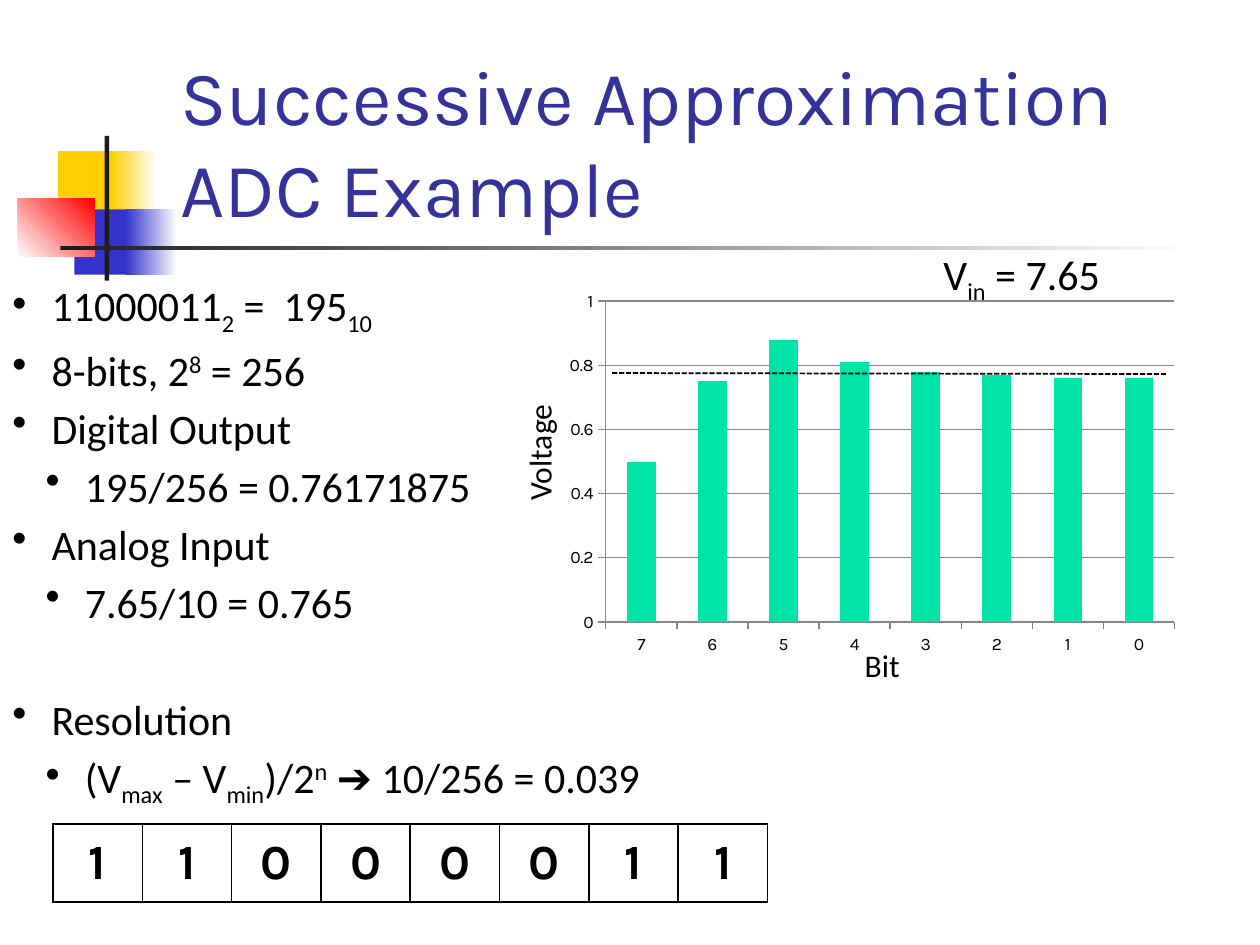
from dataclasses import dataclass

from lxml.etree import SubElement
from pptx import Presentation
from pptx.chart.data import CategoryChartData
from pptx.dml.color import RGBColor
from pptx.enum.chart import XL_CHART_TYPE, XL_TICK_MARK
from pptx.enum.dml import MSO_LINE
from pptx.enum.shapes import MSO_CONNECTOR, MSO_SHAPE
from pptx.enum.text import MSO_ANCHOR, PP_ALIGN
from pptx.oxml.ns import qn
from pptx.util import Cm, Pt

COLORS = {
    "yellow": "FFCF01", "blue": "3333CC", "red": "FF0000", "dark": "1C1C1C",
    "title": "333399", "bar": "00E4A8", "grid": "868686",
    "black": "000000", "white": "FFFFFF",
}
HANGING = 0.79  # bullet to text, in cm
LEVEL_STEP = 0.67
LINE_GAP = 4.3  # points
SUB, SUPER = -25, 30


@dataclass
class Block:
    left: float
    top: float
    width: float
    height: float
    start: str
    end: str = ""
    angle: int = 0


@dataclass
class Line:
    runs: list  # (text, baseline percent)
    level: int = 0
    bullet: bool = False
    before: float = 0
    indent: float = 0


def rgb(name: str) -> RGBColor:
    return RGBColor.from_string(COLORS[name])


def plain(text: str) -> list:
    return [Line([(text, 0)])]


def point(text: str, level: int = 0, before: float = LINE_GAP) -> Line:
    return Line([(text, 0)], level, True, before)


def write_text(frame, lines: list, *, size: float, font: str = "Calibri",
               color: str = "black", bold: bool = False,
               align=PP_ALIGN.LEFT, anchor=MSO_ANCHOR.TOP) -> None:
    frame.word_wrap = True
    frame.vertical_anchor = anchor
    for number, line in enumerate(lines):
        paragraph = frame.add_paragraph() if number else frame.paragraphs[0]
        paragraph.alignment = align
        paragraph.level = line.level
        paragraph.space_before = Pt(line.before)
        properties = paragraph._p.get_or_add_pPr()
        margin = line.indent
        if line.bullet:
            margin = HANGING + line.level * LEVEL_STEP
            properties.set("indent", str(-Cm(HANGING)))
            SubElement(properties, qn("a:buChar")).set("char", "•")
        properties.set("marL", str(Cm(margin)))
        for text, baseline in line.runs:
            run = paragraph.add_run()
            run.text = text
            run.font.name, run.font.size, run.font.bold = font, Pt(size), bold
            run.font.color.rgb = rgb(color)
            if baseline:
                run.font._element.set("baseline", str(baseline * 1000))


def add_text(slide, box: tuple, lines: list, rotation: float = 0, **text_format) -> None:
    label = slide.shapes.add_textbox(*map(Cm, box))
    label.rotation = rotation
    write_text(label.text_frame, lines, **text_format)


def add_block(slide, block: Block) -> None:
    shape = slide.shapes.add_shape(
        MSO_SHAPE.RECTANGLE, *map(Cm, (block.left, block.top, block.width, block.height)))
    shape.shadow.inherit = False
    shape.line.fill.background()
    if block.end:
        shape.fill.gradient()
        shape.fill.gradient_angle = block.angle
        for stop, name in zip(shape.fill.gradient_stops, (block.start, block.end)):
            stop.color.rgb = rgb(name)
    else:
        shape.fill.solid()
        shape.fill.fore_color.rgb = rgb(block.start)


def add_bits(slide, bits: str) -> None:
    table = slide.shapes.add_table(
        1, len(bits), Cm(1.07), Cm(16.61), Cm(14.4), Cm(1.57)).table
    for cell, bit in zip(table.iter_cells(), bits):
        cell.fill.background()
        cell.margin_left = cell.margin_right = cell.margin_top = Cm(0.03)
        cell.margin_bottom = 0
        write_text(cell.text_frame, plain(bit), size=28, font="Karla",
                   bold=True, align=PP_ALIGN.CENTER)
        cell.vertical_anchor = MSO_ANCHOR.MIDDLE
        properties = cell._tc.get_or_add_tcPr()
        for position, side in enumerate(("lnL", "lnR", "lnT", "lnB")):
            border = properties.makeelement(qn(f"a:{side}"), {"w": str(Pt(1))})
            fill = SubElement(border, qn("a:solidFill"))
            SubElement(fill, qn("a:srgbClr")).set("val", COLORS["black"])
            properties.insert(position, border)


def add_voltage_chart(slide) -> None:
    data = CategoryChartData()
    data.categories = list("76543210")
    data.add_series("Series 1", (0.5, 0.75, 0.88, 0.81, 0.78, 0.77, 0.76, 0.76))
    chart = slide.shapes.add_chart(
        XL_CHART_TYPE.COLUMN_CLUSTERED, Cm(11.23), Cm(5.72), Cm(12.7), Cm(7.62), data).chart
    chart.has_legend = chart.has_title = False
    chart.font.name, chart.font.size = "Karla", Pt(10)
    chart.font.color.rgb = rgb("black")

    plot = chart.plots[0]
    plot.gap_width = 150
    plot.vary_by_categories = False
    bars = plot.series[0].format.fill
    bars.solid()
    bars.fore_color.rgb = rgb("bar")

    bit_axis, voltage_axis = chart.category_axis, chart.value_axis
    voltage_axis.minimum_scale, voltage_axis.maximum_scale = 0, 1
    voltage_axis.major_unit = 0.2
    voltage_axis.has_major_gridlines = True
    for axis in (bit_axis, voltage_axis):
        axis.major_tick_mark = XL_TICK_MARK.OUTSIDE
    for rule in (bit_axis, voltage_axis, voltage_axis.major_gridlines):
        rule.format.line.color.rgb = rgb("grid")
        rule.format.line.width = Pt(0.75)


def add_input_level(slide) -> None:
    level = slide.shapes.add_connector(
        MSO_CONNECTOR.STRAIGHT, Cm(12.34), Cm(7.52), Cm(23.52), Cm(7.54))
    level.line.color.rgb = rgb("black")
    level.line.width = Pt(1)
    level.line.dash_style = MSO_LINE.SQUARE_DOT
    SubElement(level._element.spPr, qn("a:effectLst"))


DECORATION = [
    Block(1.17, 3.05, 1.22, 1.32, "yellow"),
    Block(2.24, 3.05, 0.91, 1.32, "yellow", "white"),
    Block(1.5, 4.22, 1.17, 1.32, "blue"),
    Block(2.54, 4.22, 1.02, 1.32, "blue", "white"),
    Block(0.36, 4.01, 1.55, 1.17, "white", "red", 45),
    Block(2.11, 2.74, 0.09, 2.92, "dark"),
    Block(1.22, 4.95, 22.86, 0.09, "dark", "white"),
]

CALCULATION = [
    Line([("11000011", 0), ("2", SUB), (" =  195", 0), ("10", SUB)], 0, True, LINE_GAP),
    Line([("8-bits, 2", 0), ("8", SUPER), (" = 256", 0)], 0, True, LINE_GAP),
    point("Digital Output"),
    point("195/256 = 0.76171875", 1),
    point("Analog Input"),
    point("7.65/10 = 0.765", 1),
    point("Resolution", before=38),
    Line([("(V", 0), ("max", SUB), (" – V", 0), ("min", SUB), (")/2", 0),
          ("n", SUPER), (" ➔ 10/256 = 0.039", 0)], 1, True, LINE_GAP),
]

INPUT_VOLTAGE = [Line([("V", 0), ("in", SUB), (" = 7.65", 0)], indent=7.54)]


def main() -> None:
    presentation = Presentation()
    presentation.slide_width, presentation.slide_height = Cm(25.4), Cm(19.05)
    slide = presentation.slides.add_slide(presentation.slide_layouts[6])

    # Corner decoration and title
    for block in DECORATION:
        add_block(slide, block)
    add_text(slide, (3.38, 0.79, 21.59, 4.09), plain("Successive Approximation ADC Example"),
             size=44, font="Karla", color="title", anchor=MSO_ANCHOR.MIDDLE)

    # Calculation and resulting bits
    add_text(slide, (0, 5.51, 19.05, 13.13), CALCULATION, size=24)
    add_bits(slide, "11000011")

    # Chart with input level and labels
    add_voltage_chart(slide)
    add_input_level(slide)
    add_text(slide, (8.99, 8.59, 3.81, 1.07), plain("Voltage"), rotation=270,
             size=18, align=PP_ALIGN.CENTER)
    add_text(slide, (15.88, 12.9, 3.81, 1.07), plain("Bit"), size=18, align=PP_ALIGN.CENTER)
    add_text(slide, (11.23, 4.88, 12.9, 1.7), INPUT_VOLTAGE, size=24)

    presentation.save("out.pptx")


if __name__ == "__main__":
    main()
